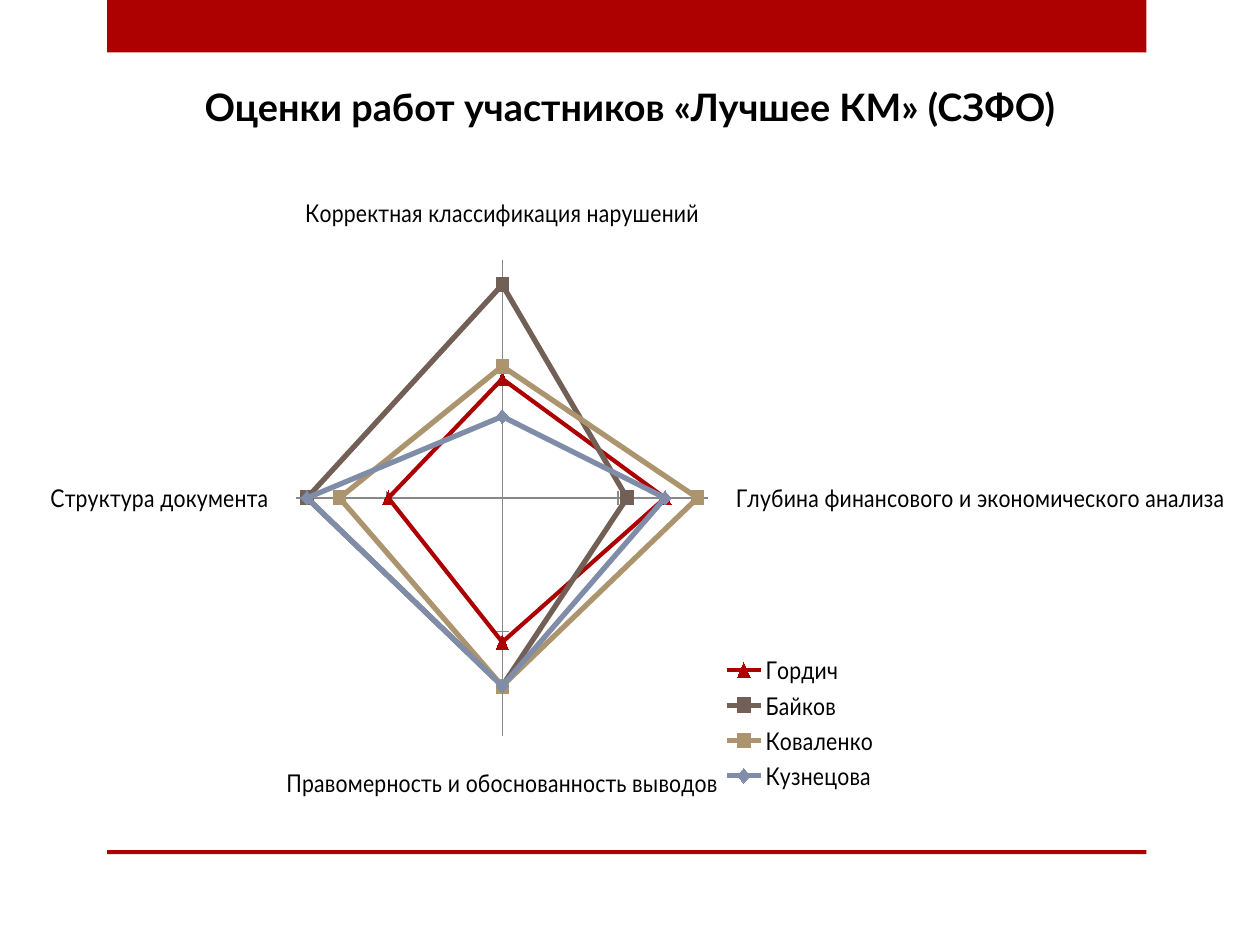
from lxml import etree
from pptx import Presentation
from pptx.chart.data import CategoryChartData
from pptx.dml.color import RGBColor
from pptx.enum.chart import (XL_CHART_TYPE, XL_LEGEND_POSITION, XL_MARKER_STYLE,
                             XL_TICK_LABEL_POSITION, XL_TICK_MARK)
from pptx.enum.shapes import MSO_SHAPE
from pptx.enum.text import MSO_ANCHOR, MSO_AUTO_SIZE, PP_ALIGN
from pptx.oxml.ns import qn
from pptx.util import Cm, Pt

RADAR = XL_CHART_TYPE.RADAR_MARKERS
RIGHT = XL_LEGEND_POSITION.RIGHT
TRIANGLE = XL_MARKER_STYLE.TRIANGLE
SQUARE = XL_MARKER_STYLE.SQUARE
DIAMOND = XL_MARKER_STYLE.DIAMOND
NO_LABELS = XL_TICK_LABEL_POSITION.NONE
CROSS = XL_TICK_MARK.CROSS
NO_TICKS = XL_TICK_MARK.NONE
RECTANGLE = MSO_SHAPE.RECTANGLE
BOTTOM = MSO_ANCHOR.BOTTOM
NO_FIT = MSO_AUTO_SIZE.NONE
CENTER = PP_ALIGN.CENTER

THEME = {
    "font": "Lato", "title": 21.6, "label": 14,
    "text": "000000", "accent": "AD0101", "axis": "888888",
}

TITLE = "Оценки работ участников «Лучшее КМ» (СЗФО)"
CRITERIA = [
    "Корректная классификация нарушений",
    "Глубина финансового и экономического анализа",
    "Правомерность и обоснованность выводов",
    "Структура документа",
]
PARTICIPANTS = [
    ("Гордич", (83, 94, 87, 85), THEME["accent"], TRIANGLE, 2.75),
    ("Байков", (98, 87, 94, 100), "726056", SQUARE, 3.5),
    ("Коваленко", (85, 100, 94, 94), "AC956E", SQUARE, 3.5),
    ("Кузнецова", (77, 94, 94, 100), "808DA9", DIAMOND, 3.5),
]
BANDS = [(0, 1.06), (17.14, 0.08)]
BAND_LEFT, BAND_WIDTH = 2.16, 20.95
TITLE_BOX = (1.27, 1.52, 22.86, 1.2)
CHART_BOX = (0.7, 3.32, 24, 13.59)
PLOT_AREA = {"x": 0.233, "y": 0.141, "w": 0.442, "h": 0.707}
LEGEND_AREA = {"x": 0.665, "y": 0.72}


def color(code):
    return RGBColor.from_string(code)


def set_font(font, size, bold=False):
    font.name = THEME["font"]
    font.size = Pt(size)
    font.bold = bold
    font.color.rgb = color(THEME["text"])


def write_text(box, text, size, bold=False, align=CENTER, anchor=BOTTOM):
    frame = box.text_frame
    frame.word_wrap = True
    frame.auto_size = NO_FIT
    frame.vertical_anchor = anchor
    para = frame.paragraphs[0]
    para.alignment = align
    span = para.add_run()
    span.text = text
    set_font(span.font, size, bold)


def add_band(page, top, height):
    band = page.shapes.add_shape(RECTANGLE, Cm(BAND_LEFT), Cm(top),
                                 Cm(BAND_WIDTH), Cm(height))
    band.shadow.inherit = False
    band.fill.solid()
    band.fill.fore_color.rgb = color(THEME["accent"])
    band.line.fill.background()


def place_part(part, area, inner=False):
    for old in part.findall(qn("c:layout")):
        part.remove(old)
    layout = etree.Element(qn("c:layout"))
    manual = etree.SubElement(layout, qn("c:manualLayout"))
    settings = [("layoutTarget", "inner")] if inner else []
    settings += [("xMode", "edge"), ("yMode", "edge"), *area.items()]
    for tag, value in settings:
        etree.SubElement(manual, qn(f"c:{tag}")).set("val", str(value))
    part.insert(0 if inner else 1, layout)


def style_axis(axis, tick):
    axis.has_major_gridlines = False
    axis.major_tick_mark = tick
    axis.minor_tick_mark = NO_TICKS
    axis.format.line.color.rgb = color(THEME["axis"])
    axis.format.line.width = Pt(1)


def add_radar(page):
    data = CategoryChartData()
    data.categories = CRITERIA
    for name, scores, *_ in PARTICIPANTS:
        data.add_series(name, scores)
    chart = page.shapes.add_chart(RADAR, *map(Cm, CHART_BOX), data).chart
    chart.has_title = False
    set_font(chart.font, THEME["label"])

    style_axis(chart.category_axis, NO_TICKS)
    set_font(chart.category_axis.tick_labels.font, THEME["label"])
    scale = chart.value_axis
    style_axis(scale, CROSS)
    scale.tick_label_position = NO_LABELS
    scale.minimum_scale, scale.maximum_scale, scale.major_unit = 64, 102, 21.3

    for series, (_, _, shade, marker, width) in zip(chart.plots[0].series, PARTICIPANTS):
        series.smooth = False
        series.format.line.color.rgb = color(shade)
        series.format.line.width = Pt(width)
        series.marker.style = marker
        series.marker.size = 8
        series.marker.format.fill.solid()
        series.marker.format.fill.fore_color.rgb = color(shade)
        series.marker.format.line.fill.background()

    chart.has_legend = True
    chart.legend.position = RIGHT
    chart.legend.include_in_layout = False
    set_font(chart.legend.font, THEME["label"])
    root = chart.element.find(qn("c:chart"))
    place_part(root.find(qn("c:plotArea")), PLOT_AREA, inner=True)
    place_part(root.find(qn("c:legend")), LEGEND_AREA)


def main():
    deck = Presentation()
    deck.slide_width, deck.slide_height = Cm(25.4), Cm(19.05)
    page = deck.slides.add_slide(deck.slide_layouts[5])
    for top, height in BANDS:
        add_band(page, top, height)
    title = page.shapes.title
    title.left, title.top, title.width, title.height = map(Cm, TITLE_BOX)
    write_text(title, TITLE, THEME["title"], bold=True)
    add_radar(page)
    deck.save("out.pptx")


if __name__ == "__main__":
    main()
